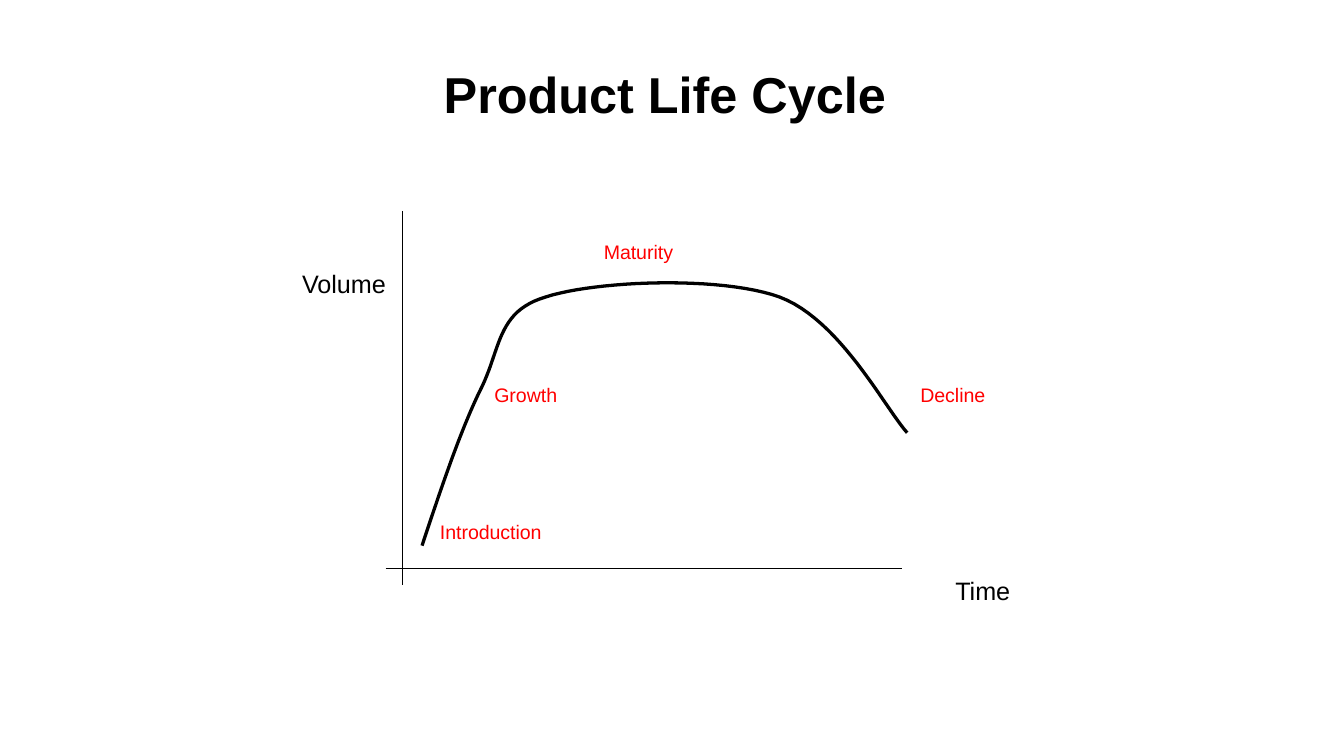
from dataclasses import dataclass

from lxml.etree import SubElement
from pptx import Presentation
from pptx.dml.color import RGBColor as Color
from pptx.enum.shapes import MSO_CONNECTOR as Connector
from pptx.enum.text import MSO_ANCHOR as Anchor, MSO_AUTO_SIZE as AutoSize, PP_ALIGN as Align
from pptx.oxml.ns import qn
from pptx.util import Inches, Pt

COLUMNS, ROWS = 100, 56.25
TITLE_ONLY = 5
CURVE_STEPS = 24


@dataclass(frozen=True)
class Theme:
    """Colours, font, type sizes and line widths of the slide."""
    font: str = "Arial"
    ink: Color = Color(0, 0, 0)
    accent: Color = Color(255, 0, 0)
    title_size: float = 27
    axis_size: float = 13.5
    stage_size: float = 10.5
    axis_width: float = 0.5
    curve_width: float = 1.75


THEME = Theme()

AXES = [((29.95, 15.7), (29.95, 43.5)), ((28.7, 42.3), (67.1, 42.3))]
AXIS_NAMES = [("Time", 70.1, 42.35, 6.2), ("Volume", 21.5, 19.5, 8.3)]
STAGES = [
    ("Introduction", 31.75, 38.2, 9.7),
    ("Growth", 35.8, 28, 6.8),
    ("Maturity", 43.95, 17.35, 7.3),
    ("Decline", 67.5, 28, 7),
]
CURVE_START = (31.4, 40.6)
CURVE_BENDS = [
    ((32.8, 36.4), (34.2, 32.2), (35.7, 29.1)),
    ((37.3, 26), (36.9, 23.2), (40.6, 22.1)),
    ((44.3, 20.9), (53.5, 20.5), (58, 22.1)),
    ((62.5, 23.8), (65.8, 30.3), (67.5, 32.2)),
]


def grid(*cells):
    """Turn grid units, a tenth of an inch each, into lengths."""
    return [Inches(cell / 10) for cell in cells]


def write(para, text, size, color, bold=False):
    """Add one formatted run to a paragraph."""
    span = para.add_run()
    span.text = text
    span.font.name = THEME.font
    span.font.size = Pt(size)
    span.font.bold = bold
    span.font.color.rgb = color


def set_title(page, text):
    """Place and fill the title placeholder."""
    box = page.shapes.title
    box.left, box.top, box.width, box.height = grid(5, 2.25, 90, 9.4)
    box.text_frame.vertical_anchor = Anchor.MIDDLE
    para = box.text_frame.paragraphs[0]
    para.alignment = Align.CENTER
    write(para, text, THEME.title_size, THEME.ink, bold=True)


def add_label(page, text, left, top, width, height, size, color):
    """Add a one-line label that fits its text."""
    box = page.shapes.add_textbox(*grid(left, top, width, height))
    box.text_frame.word_wrap = False
    box.text_frame.auto_size = AutoSize.SHAPE_TO_FIT_TEXT
    write(box.text_frame.paragraphs[0], text, size, color)


def add_axis(page, start, end):
    """Draw one thin axis line."""
    axis = page.shapes.add_connector(Connector.STRAIGHT, *grid(*start, *end))
    axis.line.color.rgb = THEME.ink
    axis.line.width = Pt(THEME.axis_width)
    SubElement(axis._element.spPr, qn("a:effectLst"))


def bezier_point(corners, t):
    """Return the point at share t along a cubic curve."""
    weights = ((1 - t) ** 3, 3 * t * (1 - t) ** 2, 3 * t ** 2 * (1 - t), t ** 3)
    return tuple(sum(w * corner[i] for w, corner in zip(weights, corners)) for i in (0, 1))


def add_curve(page, start, bends):
    """Draw an open smooth curve through a chain of cubic bends."""
    points, joint = [], start
    for bend in bends:
        corners = (joint, *bend)
        points += [bezier_point(corners, step / CURVE_STEPS) for step in range(1, CURVE_STEPS + 1)]
        joint = bend[-1]
    outline = page.shapes.build_freeform(*grid(*start))
    outline.add_line_segments([grid(*point) for point in points], close=False)
    curve = outline.convert_to_shape()
    curve.shadow.inherit = False
    curve.fill.background()
    curve.line.color.rgb = THEME.ink
    curve.line.width = Pt(THEME.curve_width)


def main():
    """Build the product life cycle slide."""
    deck = Presentation()
    deck.slide_width, deck.slide_height = grid(COLUMNS, ROWS)
    page = deck.slides.add_slide(deck.slide_layouts[TITLE_ONLY])
    set_title(page, "Product Life Cycle ")
    for start, end in AXES:
        add_axis(page, start, end)
    add_curve(page, CURVE_START, CURVE_BENDS)
    for text, left, top, width in AXIS_NAMES:
        add_label(page, text, left, top, width, 3.3, THEME.axis_size, THEME.ink)
    for text, left, top, width in STAGES:
        add_label(page, text, left, top, width, 2.8, THEME.stage_size, THEME.accent)
    deck.save("out.pptx")


if __name__ == "__main__":
    main()
